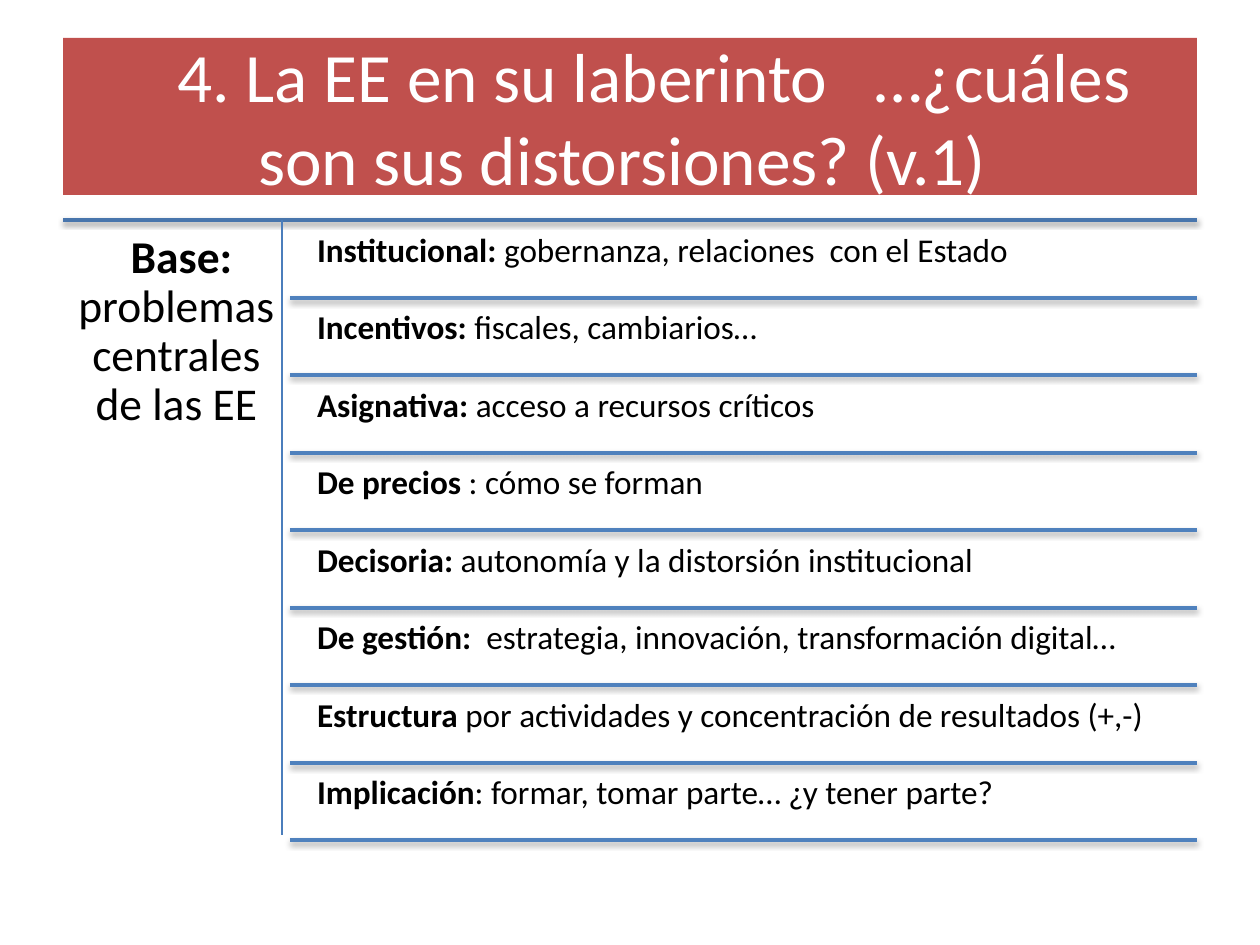
from dataclasses import dataclass
from typing import NamedTuple

from lxml.etree import SubElement
from pptx import Presentation
from pptx.dml.color import RGBColor
from pptx.enum.shapes import MSO_CONNECTOR
from pptx.enum.text import MSO_ANCHOR, MSO_AUTO_SIZE, PP_ALIGN
from pptx.oxml.ns import qn
from pptx.util import Emu, Pt

EMU_PER_PX = 914400 / 126
RED = RGBColor(0xC0, 0x50, 0x4D)
WHITE = RGBColor(0xFF, 0xFF, 0xFF)
BLACK = RGBColor(0, 0, 0)
TOP_BLUE = RGBColor(0x48, 0x75, 0xAC)
ROW_BLUE = RGBColor(0x4F, 0x81, 0xBD)
DIVIDER_BLUE = RGBColor(0x4B, 0x7E, 0xBC)

LEFT, RIGHT = 63, 1197
TOP_RULE, FIRST_RULE, LAST_RULE = 220, 298, 840
ROW_RULE_LEFT, ROW_TEXT_LEFT = 290, 307


class Box(NamedTuple):
    left: int
    top: int
    width: int
    height: int


@dataclass(frozen=True)
class Entry:
    heading: str
    detail: str


@dataclass(frozen=True)
class Rule:
    start: tuple[int, int]
    end: tuple[int, int]
    color: RGBColor
    weight: float = 2
    shadow: bool = True


BASE = Entry(" Base: ", "problemas centrales de las EE")
DISTORTIONS = [
    Entry("Institucional: ", "gobernanza, relaciones  con el Estado"),
    Entry("Incentivos: ", "fiscales, cambiarios…"),
    Entry("Asignativa: ", "acceso a recursos críticos"),
    Entry("De precios ", ": cómo se forman"),
    Entry("Decisoria: ", "autonomía y la distorsión institucional"),
    Entry("De gestión:  ", "estrategia, innovación, transformación digital…"),
    Entry("Estructura ", "por actividades y concentración de resultados (+,-)"),
    Entry("Implicación", ": formar, tomar parte… ¿y tener parte?"),
]


def px(value: int) -> Emu:
    return Emu(round(value * EMU_PER_PX))


def add_run(paragraph, text: str, size: float, color: RGBColor, bold: bool = False) -> None:
    run = paragraph.add_run()
    run.text = text
    run.font.color.rgb = color
    for name, value in {"name": "Calibri", "size": Pt(size), "bold": bold}.items():
        setattr(run.font, name, value)


def add_title(slide, box: Box) -> None:
    title = slide.shapes.title
    for name, value in box._asdict().items():
        setattr(title, name, px(value))
    title.fill.solid()
    title.fill.fore_color.rgb = RED
    frame = title.text_frame
    frame.auto_size = MSO_AUTO_SIZE.NONE
    frame.word_wrap = True
    frame.vertical_anchor = MSO_ANCHOR.MIDDLE
    paragraph = frame.paragraphs[0]
    paragraph.alignment = PP_ALIGN.CENTER
    paragraph._p.get_or_add_pPr().set("indent", str(px(49)))
    add_run(paragraph, "4. La EE en su laberinto   …¿cuáles son sus distorsiones? (v.1) ", 39.6, WHITE)


def add_entry(slide, entry: Entry, box: Box, size: int, inset: int, alignment: PP_ALIGN) -> None:
    frame = slide.shapes.add_textbox(*map(px, box)).text_frame
    frame.word_wrap = True
    for side in ("left", "top", "right", "bottom"):
        setattr(frame, f"margin_{side}", px(inset))
    paragraph = frame.paragraphs[0]
    paragraph.alignment = alignment
    paragraph.line_spacing = 0.9
    add_run(paragraph, entry.heading, size, BLACK, bold=True)
    add_run(paragraph, entry.detail, size, BLACK)


def add_rule(slide, rule: Rule) -> None:
    connector = slide.shapes.add_connector(
        MSO_CONNECTOR.STRAIGHT, *map(px, rule.start + rule.end))
    connector.line.color.rgb = rule.color
    connector.line.width = Pt(rule.weight)
    effects = SubElement(connector._element.spPr, qn("a:effectLst"))
    if rule.shadow:
        shadow = SubElement(effects, qn("a:outerShdw"), blurRad="40000", dist="20000",
                            dir="5400000", rotWithShape="0")
        color = SubElement(shadow, qn("a:srgbClr"), val=str(BLACK))
        SubElement(color, qn("a:alpha"), val="38000")


def main() -> None:
    presentation = Presentation()
    presentation.slide_width, presentation.slide_height = px(1260), px(945)
    slide = presentation.slides.add_slide(presentation.slide_layouts[5])

    add_title(slide, Box(LEFT, 38, RIGHT - LEFT, 157))
    add_rule(slide, Rule((LEFT, TOP_RULE), (RIGHT, TOP_RULE), TOP_BLUE))
    add_entry(slide, BASE, Box(LEFT, TOP_RULE, 227, 624), 26, 14, PP_ALIGN.CENTER)

    pitch = (LAST_RULE - FIRST_RULE) / (len(DISTORTIONS) - 1)
    for index, entry in enumerate(DISTORTIONS):
        bottom = round(FIRST_RULE + index * pitch)
        add_entry(slide, entry, Box(ROW_TEXT_LEFT, bottom - 74, 891, 74), 19, 10, PP_ALIGN.LEFT)
        add_rule(slide, Rule((ROW_RULE_LEFT, bottom), (RIGHT, bottom), ROW_BLUE))

    add_rule(slide, Rule((282, TOP_RULE), (282, 835), DIVIDER_BLUE, 0.75, shadow=False))
    presentation.save("out.pptx")


if __name__ == "__main__":
    main()
